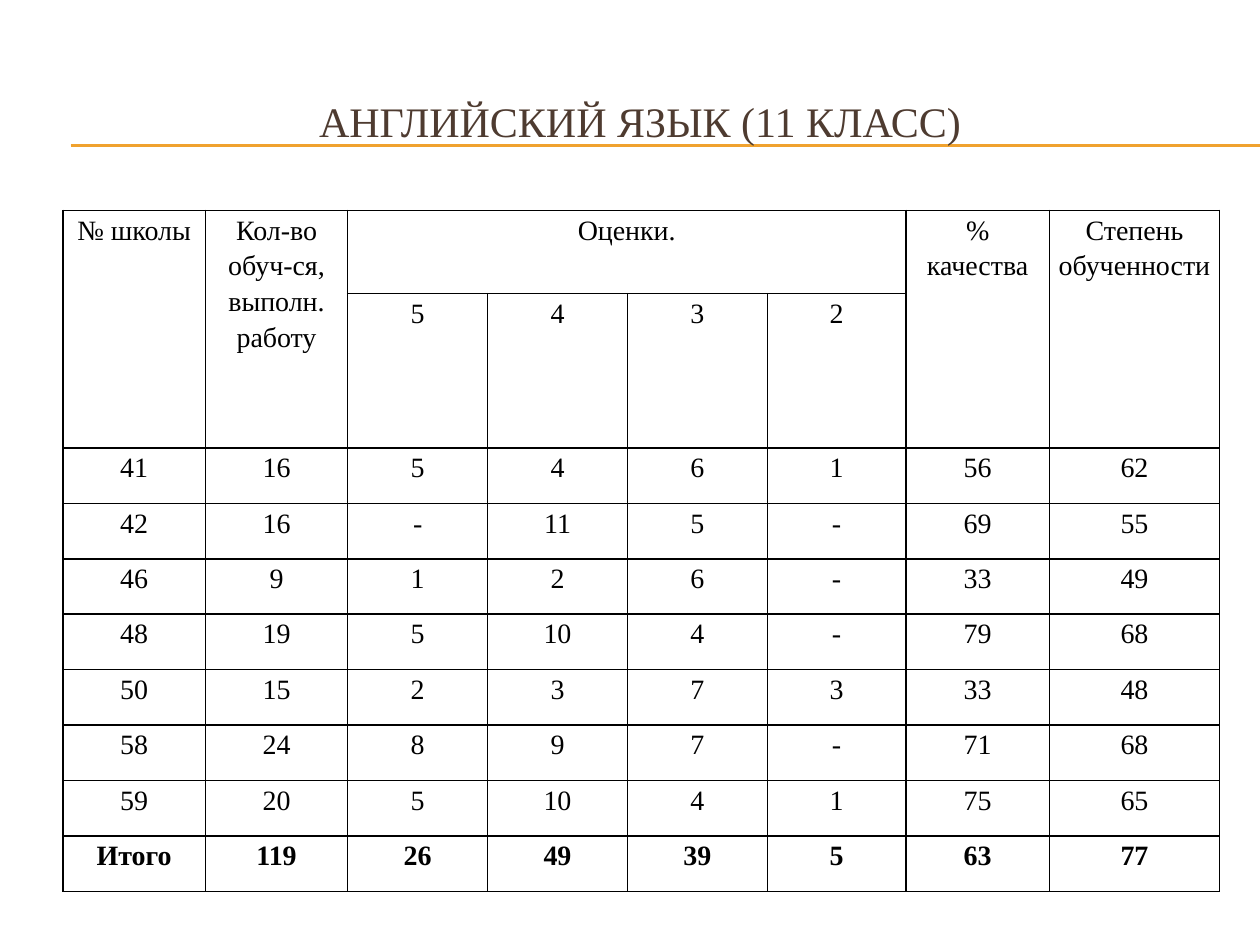
from lxml.etree import SubElement
from pptx import Presentation
from pptx.dml.color import RGBColor
from pptx.enum.shapes import MSO_CONNECTOR
from pptx.enum.text import MSO_ANCHOR, PP_ALIGN
from pptx.oxml import parse_xml
from pptx.oxml.ns import nsdecls, qn
from pptx.util import Inches, Pt

BROWN = RGBColor(0x4E, 0x3B, 0x30)
GOLD = RGBColor(0xF0, 0xA2, 0x2E)
BLACK = RGBColor(0, 0, 0)

HEAD = ["№ школы", "Кол-во обуч-ся, выполн. работу", "Оценки.", "", "", "",
        "% качества", "Степень обученности"]
MARKS = ["", "", "5", "4", "3", "2", "", ""]
SCHOOLS = [
    "41 16 5 4 6 1 56 62",
    "42 16 - 11 5 - 69 55",
    "46 9 1 2 6 - 33 49",
    "48 19 5 10 4 - 79 68",
    "50 15 2 3 7 3 33 48",
    "58 24 8 9 7 - 71 68",
    "59 20 5 10 4 1 75 65",
    "Итого 119 26 49 39 5 63 77",
]
SPANS = [(0, 0, 1, 0), (0, 1, 1, 1), (0, 2, 0, 5), (0, 6, 1, 6), (0, 7, 1, 7)]
WIDTHS = [2.26, 2.26, 2.22, 2.22, 2.22, 2.2, 2.28, 2.7]
HEIGHTS = [1.32, 1.26] + [0.88] * len(SCHOOLS)


class Deck:
    font = "Times New Roman"
    unit = Inches(0.5)

    def __init__(self, cols, rows):
        self.file = Presentation()
        self.file.slide_width = self.grid(cols)
        self.file.slide_height = self.grid(rows)
        self.slide = self.file.slides.add_slide(self.file.slide_layouts[6])
        self.shapes = self.slide.shapes

    def grid(self, count):
        return round(count * self.unit)

    def label(self, frame, text, size, color, bold=False):
        frame.word_wrap = True
        par = frame.paragraphs[0]
        par.text = text
        par.alignment = PP_ALIGN.CENTER
        par.font.name = self.font
        par.font.size = Pt(size)
        par.font.bold = bold
        par.font.color.rgb = color
        return par

    def line(self, left, right, top):
        ends = [self.grid(n) for n in (left, top, right, top)]
        rule = self.shapes.add_connector(MSO_CONNECTOR.STRAIGHT, *ends)
        rule.line.color.rgb = GOLD
        rule.line.width = Pt(0.75)
        SubElement(rule._element.spPr, qn("a:effectLst"))

    def title(self, text, *place):
        box = self.shapes.add_textbox(*map(self.grid, place))
        box.text_frame.vertical_anchor = MSO_ANCHOR.MIDDLE
        self.label(box.text_frame, text, 24, BROWN)

    def border(self, cell):
        props = cell._tc.get_or_add_tcPr()
        for spot, side in enumerate("LRTB"):
            props.insert(spot, parse_xml(
                f'<a:ln{side} {nsdecls("a")} w="{Pt(1)}"><a:solidFill>'
                f'<a:srgbClr val="{BLACK}"/></a:solidFill></a:ln{side}>'))

    def cell(self, cell, text, bold):
        cell.margin_left = cell.margin_right = Inches(0.07)
        cell.margin_top = cell.margin_bottom = 0
        cell.fill.background()
        self.border(cell)
        par = self.label(cell.text_frame, text, 16, BLACK, bold)
        par.line_spacing = 1.15

    def table(self, left, top, data, spans):
        place = [self.grid(n) for n in (left, top, sum(WIDTHS), sum(HEIGHTS))]
        table = self.shapes.add_table(len(data), len(WIDTHS), *place).table
        table.first_row = table.horz_banding = False
        for col, width in zip(table.columns, WIDTHS):
            col.width = self.grid(width)
        for row, height in zip(table.rows, HEIGHTS):
            row.height = self.grid(height)
        for r, texts in enumerate(data):
            for c, text in enumerate(texts):
                self.cell(table.cell(r, c), text, r == len(data) - 1)
        for r, c, last, end in spans:
            table.cell(r, c).merge(table.cell(last, end))


def main():
    deck = Deck(20, 15)
    for top in (2.3, 2.32):
        deck.line(1.12, 20, top)
    deck.title("АНГЛИЙСКИЙ ЯЗЫК (11 КЛАСС)", 0.66, 1, 19, 1.84)
    data = [HEAD, MARKS] + [row.split() for row in SCHOOLS]
    deck.table(1, 3.34, data, SPANS)
    deck.file.save("out.pptx")


if __name__ == "__main__":
    main()
